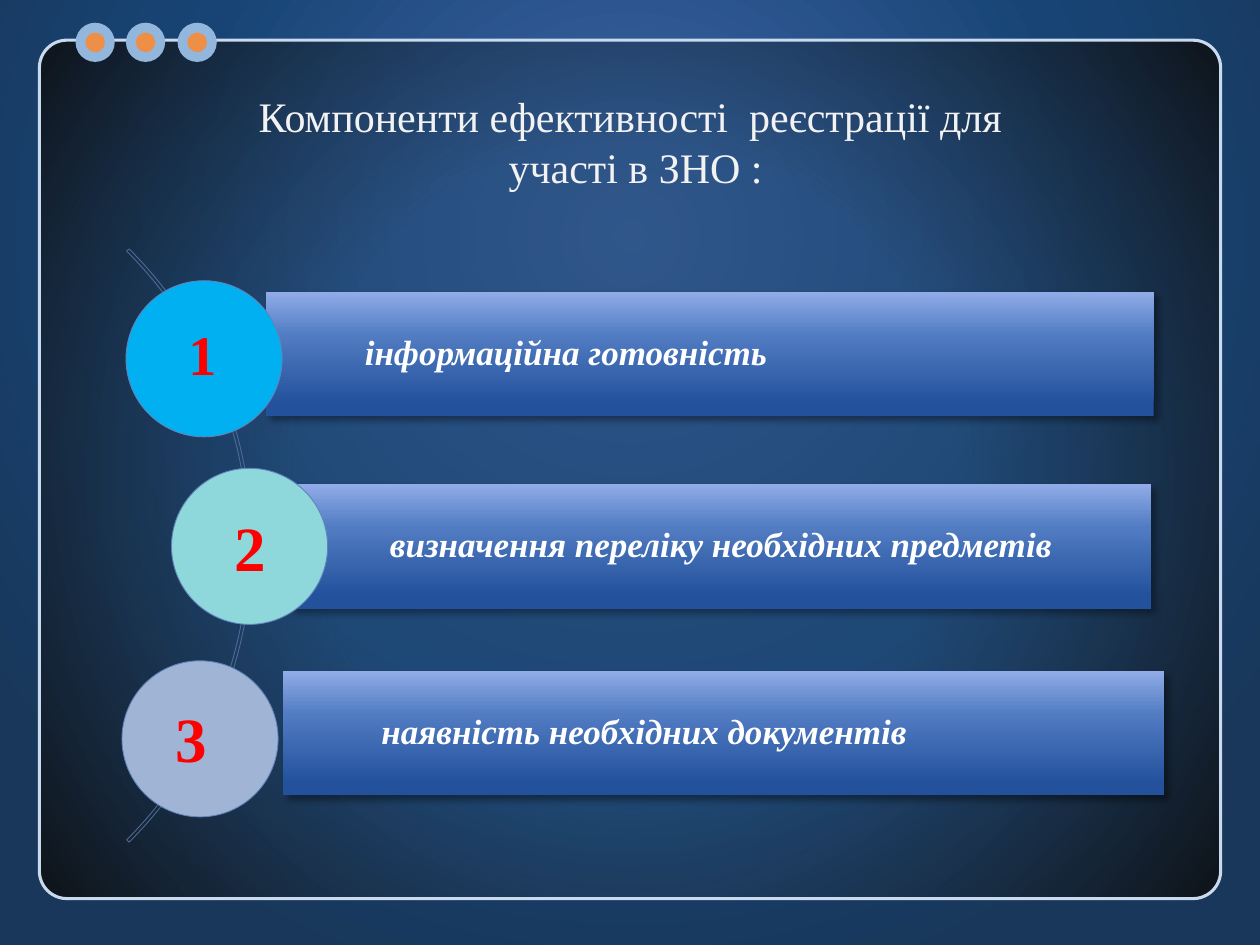
from lxml import etree
from pptx import Presentation
from pptx.dml.color import RGBColor
from pptx.enum.shapes import MSO_SHAPE
from pptx.enum.text import MSO_ANCHOR, MSO_AUTO_SIZE, PP_ALIGN
from pptx.oxml import parse_xml
from pptx.oxml.ns import nsdecls, qn
from pptx.util import Pt

RECT, ROUNDED = MSO_SHAPE.RECTANGLE, MSO_SHAPE.ROUNDED_RECTANGLE
OVAL, ARC = MSO_SHAPE.OVAL, MSO_SHAPE.BLOCK_ARC
LEFT, CENTER = PP_ALIGN.LEFT, PP_ALIGN.CENTER
MIDDLE, TOP = MSO_ANCHOR.MIDDLE, MSO_ANCHOR.TOP
GROW, FIXED = MSO_AUTO_SIZE.SHAPE_TO_FIT_TEXT, MSO_AUTO_SIZE.NONE

COLORS = {
    "frame": "C9DAEE", "ring": "93B6DD", "dot": "EE8F48",
    "title": "F2F2F2", "label": "FFFFFF", "number": "FF0000",
    "arc": "4E6996", "outline": "6183BB", "shadow": "000000",
    "first": "00B0F0", "second": "8ED7DA", "third": "A0B5D6",
}
# Gradient stops: position %, colour, opacity %
BACKDROP = [(0, "4368AB", 100), (59, "174475", 100), (100, "18375A", 100)]
PANEL = [(45, "254B75", 60), (100, "0D0D0D", 85)]
BAR = [(10, "23519C", 100), (65, "517CC2", 100), (100, "91ACE8", 100)]


def rgb(name):
    return RGBColor.from_string(COLORS[name])


def gradient(stops, angle=None, center=None):
    """Linear gradient at an angle, or circular one with its fillToRect in %."""
    stop_xml = "".join(
        f'<a:gs pos="{pos * 1000}"><a:srgbClr val="{color}">'
        f'<a:alpha val="{opacity * 1000}"/></a:srgbClr></a:gs>'
        for pos, color, opacity in stops)
    if center is None:
        shade = f'<a:lin ang="{angle * 60000}" scaled="0"/>'
    else:
        sides = " ".join(f'{side}="{part * 1000}"' for side, part in zip("ltrb", center))
        shade = f'<a:path path="circle"><a:fillToRect {sides}/></a:path>'
    return parse_xml(f'<a:gradFill {nsdecls("a")} rotWithShape="1">'
                     f'<a:gsLst>{stop_xml}</a:gsLst>{shade}</a:gradFill>')


def put_gradient(fill, parent, gradient_xml):
    fill.solid()
    parent.replace(parent.find(qn("a:solidFill")), gradient_xml)


def write(frame, text, size, color, align=LEFT, anchor=TOP, bold=False,
          italic=False, spacing=None, insets=(7.2, 3.6, 7.2, 3.6), fit=FIXED):
    frame.auto_size = fit
    frame.word_wrap = True
    frame.vertical_anchor = anchor
    (frame.margin_left, frame.margin_top,
     frame.margin_right, frame.margin_bottom) = map(Pt, insets)
    paragraph = frame.paragraphs[0]
    paragraph.text = text
    paragraph.alignment = align
    if spacing:
        paragraph.line_spacing = spacing
    for run in paragraph.runs:
        run.font.name = "Times New Roman"
        run.font.size = Pt(size)
        run.font.bold = bold
        run.font.italic = italic
        run.font.color.rgb = rgb(color)


class Deck:
    def __init__(self):
        self.prs = Presentation()
        self.prs.slide_width, self.prs.slide_height = Pt(720), Pt(540)
        self.slide = self.prs.slides.add_slide(self.prs.slide_layouts[5])

    def background(self):
        fill = self.slide.background.fill
        put_gradient(fill, self.slide.element.cSld.bg.bgPr,
                     gradient(BACKDROP, center=(50, 0, 50, 50)))

    def shape(self, kind, left, top, width, height, fill=None, line=None, weight=0.5):
        """Add a preset shape; fill is a colour name or a gradient element."""
        item = self.slide.shapes.add_shape(kind, Pt(left), Pt(top), Pt(width), Pt(height))
        item.shadow.inherit = False
        if fill is None:
            item.fill.background()
        elif isinstance(fill, str):
            item.fill.solid()
            item.fill.fore_color.rgb = rgb(fill)
        else:
            put_gradient(item.fill, item.element.spPr, fill)
        if line:
            item.line.color.rgb = rgb(line)
            item.line.width = Pt(weight)
        else:
            item.line.fill.background()
        return item

    def title(self, text):
        title = self.slide.shapes.title
        title.left, title.top, title.width, title.height = map(Pt, (42.5, 43.2, 641.5, 75))
        write(title.text_frame, text, 24, "title", align=CENTER, anchor=MIDDLE)

    def panel(self):
        panel = self.shape(ROUNDED, 22.5, 23, 675, 490.5,
                           gradient(PANEL, center=(50, 50, 50, 50)), "frame", 1.75)
        panel.adjustments[0] = 0.032

    def ring(self, left, top=13, size=22.4, inset=5.6):
        self.shape(OVAL, left, top, size, size, "ring")
        inner = size - 2 * inset
        self.shape(OVAL, left + inset, top + inset, inner, inner, "dot")

    def arc(self):
        arc = self.shape(ARC, -335.5, 72, 479.5, 479.5, line="arc")
        for index, value in enumerate((189, 27, 0.004)):
            arc.adjustments[index] = value

    def bar(self, left, top, width, text):
        bar = self.shape(RECT, left, top, width, 71.2, gradient(BAR, angle=270))
        effects = bar.element.spPr.find(qn("a:effectLst"))
        shadow = etree.SubElement(effects, qn("a:outerShdw"), blurRad=str(Pt(4)),
                                  dist=str(Pt(3)), dir=str(45 * 60000), rotWithShape="0")
        color = etree.SubElement(shadow, qn("a:srgbClr"), val=COLORS["shadow"])
        etree.SubElement(color, qn("a:alpha"), val="37000")
        write(bar.text_frame, text, 20, "label", anchor=MIDDLE, bold=True, italic=True,
              spacing=0.9, insets=(56.5, 4.5, 4.5, 4.5))

    def disc(self, left, top, fill):
        self.shape(OVAL, left, top, 89.2, 89.2, fill, "outline")

    def number(self, text, left, top, width, height, size, align):
        box = self.slide.shapes.add_textbox(Pt(left), Pt(top), Pt(width), Pt(height))
        write(box.text_frame, text, size, "number", align=align, bold=True, fit=GROW)


def main():
    deck = Deck()
    deck.background()
    deck.panel()
    for left in (43.2, 72, 101.5):
        deck.ring(left)
    deck.title("Компоненти ефективності  реєстрації для \vучасті в ЗНО :")
    # The panel lies behind the title, as do the rings
    tree = deck.slide.shapes.title.element.getparent()
    tree.append(deck.slide.shapes.title.element)
    deck.arc()

    components = [
        ((152, 166.7, 507.2, "інформаційна готовність"), (72, 160.4, "first")),
        ((166.3, 276.6, 491.5, "визначення переліку необхідних предметів"),
         (98, 267.6, "second")),
        ((161.5, 383.4, 503.8, "наявність необхідних документів"), (69.7, 377.6, "third")),
    ]
    for bar, disc in components:
        deck.bar(*bar)
        deck.disc(*disc)

    deck.number("1", 92.9, 179.3, 45.4, 46, 32, CENTER)
    deck.number("2", 126.7, 287.3, 41, 51, 36, LEFT)
    deck.number("3", 89.3, 396, 39.6, 51, 36, CENTER)
    deck.prs.save("out.pptx")


if __name__ == "__main__":
    main()
